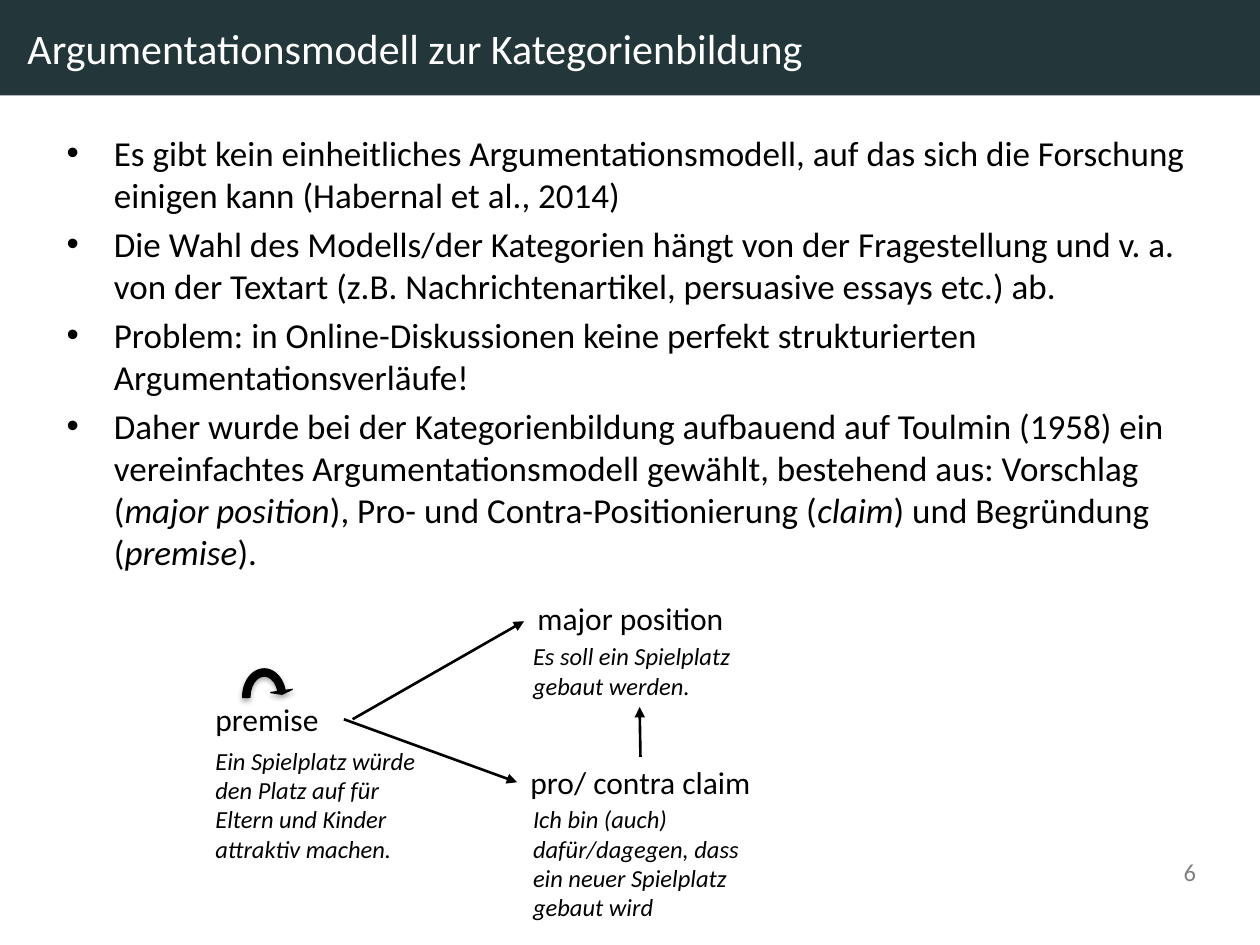
from dataclasses import dataclass

from lxml import etree
from pptx import Presentation
from pptx import util as u
from pptx.dml.color import RGBColor
from pptx.enum import shapes, text
from pptx.oxml import ns, parse_xml
from pptx.slide import Slide
from pptx.text.text import TextFrame, _Paragraph

Pt = u.Pt
FONT = "Calibri"
BAND = RGBColor(0x23, 0x37, 0x3B)
WHITE = RGBColor(0xFF, 0xFF, 0xFF)
BLACK = RGBColor(0, 0, 0)
GREY = RGBColor(0x80, 0x80, 0x80)
LEFT, CENTER, RIGHT = text.PP_ALIGN.LEFT, text.PP_ALIGN.CENTER, text.PP_ALIGN.RIGHT


@dataclass(frozen=True)
class Label:
    content: str
    left: float
    top: float
    width: float
    height: float
    size: float = 18
    italic: bool = False
    wrap: bool = False
    align: text.PP_ALIGN = LEFT
    color: RGBColor = BLACK


@dataclass(frozen=True)
class Arrow:
    start: tuple[float, float]
    end: tuple[float, float]


BULLETS = [
    ["Es gibt kein einheitliches Argumentationsmodell, auf das sich die Forschung "
     "einigen kann (Habernal et al., 2014)"],
    ["Die Wahl des Modells/der Kategorien hängt von der Fragestellung und v. a. von "
     "der Textart (z.B. Nachrichtenartikel, persuasive essays etc.) ab."],
    ["Problem: in Online-Diskussionen keine perfekt strukturierten "
     "Argumentationsverläufe!"],
    ["Daher wurde bei der Kategorienbildung aufbauend auf Toulmin (1958) ein "
     "vereinfachtes Argumentationsmodell gewählt, bestehend aus: Vorschlag (",
     "major position", "), Pro- und Contra-Positionierung (", "claim",
     ") und Begründung (", "premise", ")."],
]

LABELS = [
    Label("6", 600, 486, 90.5, 30, size=14, wrap=True, align=RIGHT, color=GREY),
    Label("major position", 299.5, 338.5, 121.5, 29, align=CENTER),
    Label("pro/ contra claim", 295.5, 432.5, 141, 29, align=CENTER),
    Label("premise", 116, 396.5, 74, 29),
    Label("Es soll ein Spielplatz gebaut werden.",
          297.5, 363, 137, 41, size=14, italic=True, wrap=True),
    Label("Ich bin (auch) dafür/dagegen, dass ein neuer Spielplatz gebaut wird",
          297.5, 456, 137, 75, size=14, italic=True, wrap=True),
    Label("Ein Spielplatz würde den Platz auf für Eltern und Kinder attraktiv machen.",
          116, 422.5, 137, 75, size=14, italic=True, wrap=True),
]

ARROWS = [
    Arrow((201.5, 411), (299.5, 355)),
    Arrow((196.5, 411), (295.5, 447)),
    Arrow((366, 432.5), (365.5, 404)),
]


def add_run(paragraph: _Paragraph, content: str, size: float,
            color: RGBColor, italic: bool = False) -> None:
    run = paragraph.add_run()
    run.text = content
    run.font.name = FONT
    run.font.size = Pt(size)
    run.font.italic = italic
    run.font.color.rgb = color


def add_text_frame(slide: Slide, left: float, top: float, width: float,
                   height: float, wrap: bool) -> TextFrame:
    box = slide.shapes.add_textbox(Pt(left), Pt(top), Pt(width), Pt(height))
    box.text_frame.word_wrap = wrap
    return box.text_frame


def add_title(slide: Slide, content: str) -> None:
    title = slide.shapes.title
    title.left, title.top, title.width, title.height = Pt(8.5), Pt(7), Pt(711.5), Pt(40.5)
    frame = title.text_frame
    frame.auto_size = text.MSO_AUTO_SIZE.NONE
    frame.vertical_anchor = text.MSO_ANCHOR.MIDDLE
    frame.paragraphs[0].alignment = LEFT
    add_run(frame.paragraphs[0], content, 24, WHITE)

    band = slide.shapes.add_shape(shapes.MSO_SHAPE.RECTANGLE, 0, 0, Pt(720), Pt(54.5))
    band.shadow.inherit = False
    band.fill.solid()
    band.fill.fore_color.rgb = BAND
    band.line.fill.background()
    title.element.addprevious(band.element)


def add_bullets(slide: Slide) -> None:
    frame = add_text_frame(slide, 31, 71.5, 659, 265, True)
    for index, parts in enumerate(BULLETS):
        paragraph = frame.add_paragraph() if index else frame.paragraphs[0]
        properties = paragraph._p.get_or_add_pPr()
        properties.set("marL", str(Pt(27)))
        properties.set("indent", str(Pt(-27)))
        etree.SubElement(properties, ns.qn("a:buFont"), typeface="Arial")
        etree.SubElement(properties, ns.qn("a:buChar"), char="•")
        if index:
            paragraph.space_before = Pt(4)
        for position, part in enumerate(parts):
            add_run(paragraph, part, 20, BLACK, italic=position % 2 == 1)


def add_label(slide: Slide, label: Label) -> None:
    frame = add_text_frame(slide, label.left, label.top, label.width,
                           label.height, label.wrap)
    paragraph = frame.paragraphs[0]
    paragraph.alignment = label.align
    add_run(paragraph, label.content, label.size, label.color, label.italic)


def add_arrow(slide: Slide, arrow: Arrow) -> None:
    points = [Pt(value) for value in (*arrow.start, *arrow.end)]
    connector = slide.shapes.add_connector(shapes.MSO_CONNECTOR.STRAIGHT, *points)
    connector.line.color.rgb = BLACK
    connector.line.width = Pt(1.5)
    etree.SubElement(connector.line._get_or_add_ln(), ns.qn("a:tailEnd"), type="triangle")
    etree.SubElement(connector.element.spPr, ns.qn("a:effectLst"))


def add_loop_arrow(slide: Slide) -> None:
    shape = slide.shapes.add_shape(shapes.MSO_SHAPE.CIRCULAR_ARROW,
                                   Pt(134.5), Pt(378), Pt(33), Pt(40.5))
    for index, value in enumerate((0.125, 6.33, 204.58, 106.99, 0.19)):
        shape.adjustments[index] = value
    shape.fill.solid()
    shape.fill.fore_color.rgb = BLACK
    shape.line.color.rgb = BLACK
    shape.line.width = Pt(0.75)
    shape.element.spPr.append(parse_xml(
        f'<a:effectLst {ns.nsdecls("a")}>'
        f'<a:outerShdw blurRad="{Pt(3.1)}" dist="{Pt(1.8)}" dir="5400000" rotWithShape="0">'
        '<a:srgbClr val="000000"><a:alpha val="35000"/></a:srgbClr>'
        '</a:outerShdw></a:effectLst>'))


def main() -> None:
    presentation = Presentation()
    presentation.slide_width, presentation.slide_height = Pt(720), Pt(540)
    slide = presentation.slides.add_slide(presentation.slide_layouts.get_by_name("Title Only"))
    add_title(slide, "Argumentationsmodell zur Kategorienbildung")
    add_bullets(slide)
    for label in LABELS:
        add_label(slide, label)
    for arrow in ARROWS:
        add_arrow(slide, arrow)
    add_loop_arrow(slide)
    presentation.save("out.pptx")


if __name__ == "__main__":
    main()
